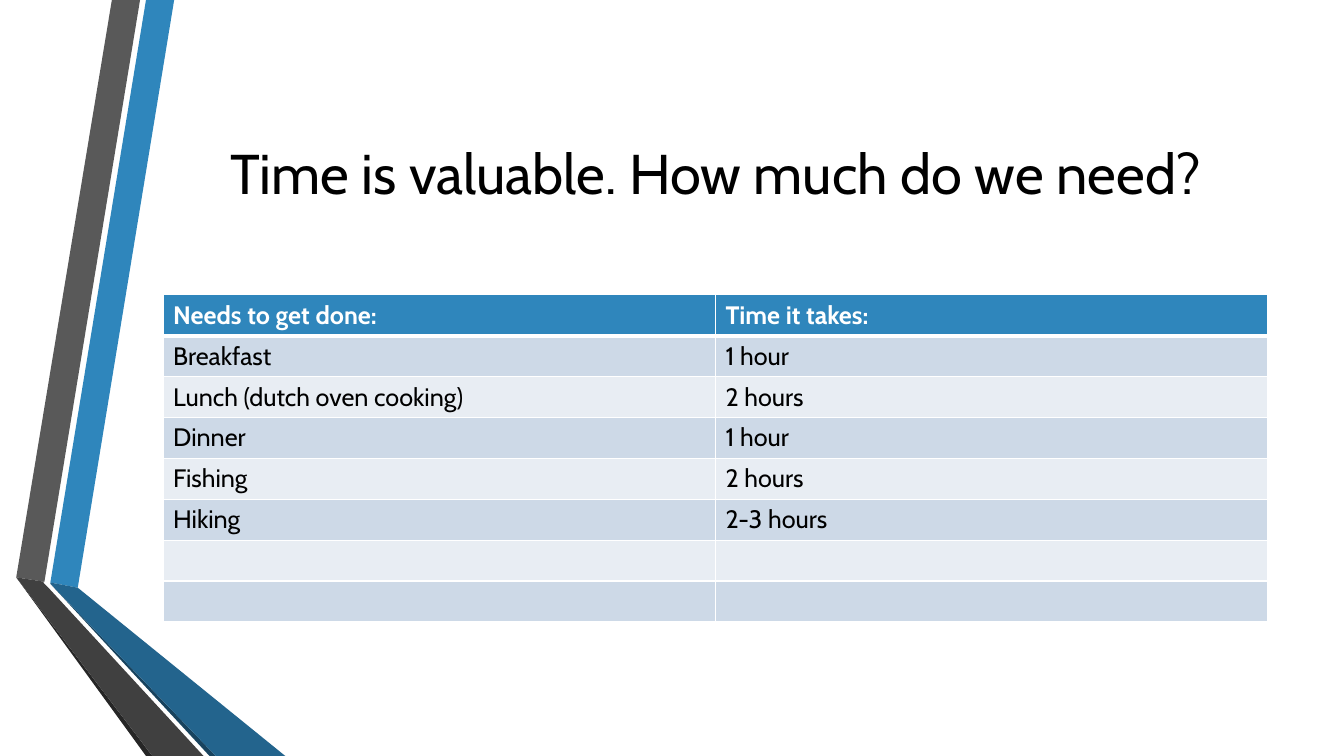
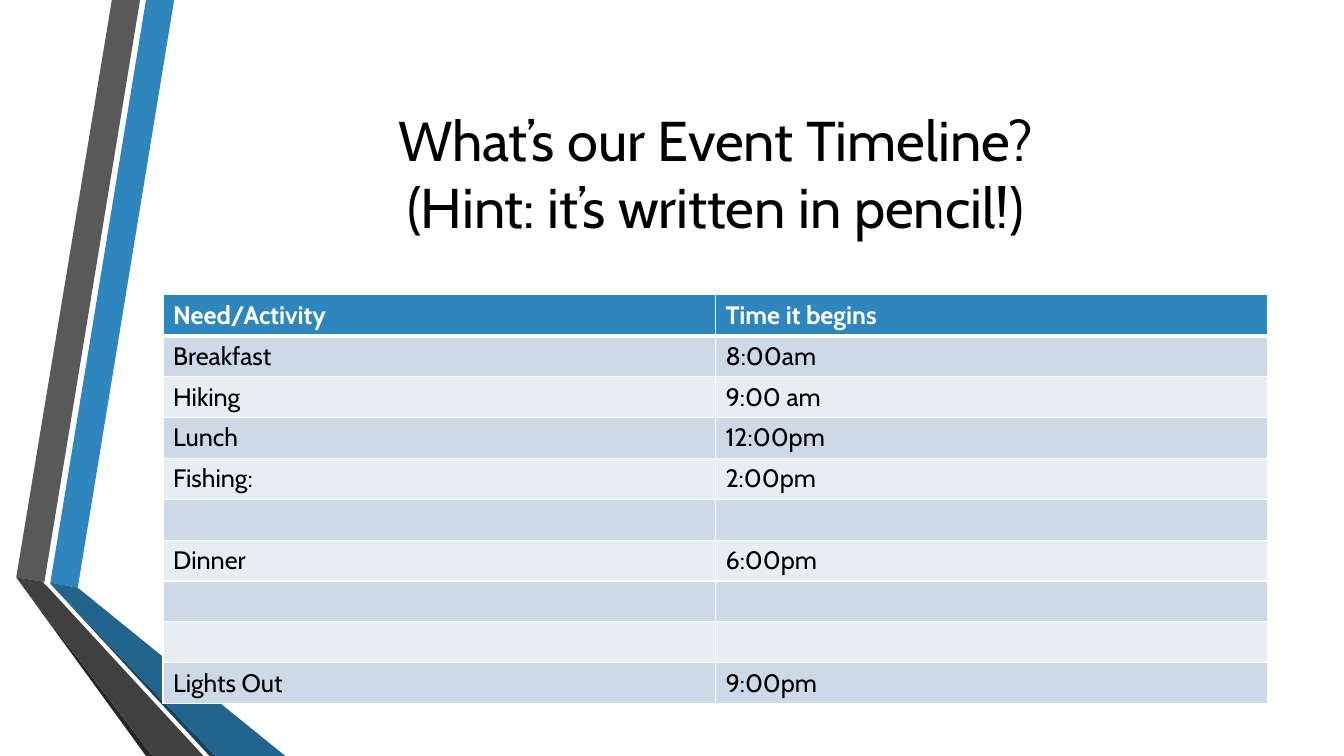
from lxml.etree import SubElement
from pptx import Presentation
from pptx.dml.color import RGBColor
from pptx.enum.text import MSO_ANCHOR, PP_ALIGN
from pptx.oxml.ns import qn
from pptx.util import Cm, Pt

FONT = "Cabin"
BLACK, WHITE, BLUE = "000000", "FFFFFF", "2F86BC"
STRIPES = ("CDD9E7", "E8EDF3")

# Lengths in centimetres
WIDTH, HEIGHT = 33.87, 19.05
LEFT, SPAN = 4.11, 27.84
TITLE_TOP, TITLE_HIGH = 1.9, 4.88
TABLE_TOP, ROW_HIGH = 7.43, 1.03

BANDS = [
    (BLUE, [(1.27, 14.68), (1.96, 14.81), (4.39, 0), (3.68, 0)]),
    ("595959", [(3.53, 0), (2.82, 0), (0.41, 14.55), (1.12, 14.66)]),
    ("262626", [(0.41, 14.55), (3.68, HEIGHT), (3.84, HEIGHT)]),
    ("18435E", [(1.27, 14.71), (5.28, HEIGHT), (5.44, HEIGHT)]),
    ("23648D", [(1.27, 14.68), (1.27, 14.71), (5.44, HEIGHT),
                (7.19, HEIGHT), (1.96, 14.81)]),
    ("404040", [(5.13, HEIGHT), (1.22, 14.81), (1.09, 14.68), (1.12, 14.66),
                (0.41, 14.55), (3.84, HEIGHT)]),
]

SLIDES = [
    (["Time is valuable. How much do we need?"],
     [("Needs to get done:", "Time it takes:"),
      ("Breakfast", "1 hour"),
      ("Lunch (dutch oven cooking)", "2 hours"),
      ("Dinner", "1 hour"),
      ("Fishing", "2 hours"),
      ("Hiking", "2-3 hours"),
      ("", ""),
      ("", "")]),
    (["What’s our Event Timeline?", "(Hint: it’s written in pencil!)"],
     [("Need/Activity", "Time it begins"),
      ("Breakfast", "8:00am"),
      ("Hiking", "9:00 am"),
      ("Lunch", "12:00pm"),
      ("Fishing:", "2:00pm"),
      ("", ""),
      ("Dinner", "6:00pm"),
      ("", ""),
      ("", ""),
      ("Lights Out", "9:00pm")]),
]


def paint(fill, color):
    fill.solid()
    fill.fore_color.rgb = RGBColor.from_string(color)


def add_run(para, text, size, color, bold=False):
    run = para.add_run()
    run.text = text
    run.font.name = FONT
    run.font.size = Pt(size)
    run.font.bold = bold
    run.font.color.rgb = RGBColor.from_string(color)


def add_bands(slide):
    for color, points in BANDS:
        start, *rest = [(Cm(x), Cm(y)) for x, y in points]
        builder = slide.shapes.build_freeform(*start)
        builder.add_line_segments(rest, close=True)
        band = builder.convert_to_shape()
        band.shadow.inherit = False
        paint(band.fill, color)
        band.line.fill.background()


def add_title(slide, lines):
    box = slide.shapes.add_textbox(
        Cm(LEFT), Cm(TITLE_TOP), Cm(SPAN), Cm(TITLE_HIGH))
    frame = box.text_frame
    frame.word_wrap = True
    frame.vertical_anchor = MSO_ANCHOR.MIDDLE
    para = frame.paragraphs[0]
    para.alignment = PP_ALIGN.CENTER
    for i, line in enumerate(lines):
        if i:
            para.add_line_break()
        add_run(para, line, 40, BLACK)


def add_borders(cell, top, bottom):
    """Draw white borders; call before the fill, which must follow in the XML."""
    props = cell._tc.get_or_add_tcPr()
    for side, width in (("L", 1), ("R", 1), ("T", top), ("B", bottom)):
        line = SubElement(props, qn(f"a:ln{side}"), w=str(Pt(width)))
        solid = SubElement(line, qn("a:solidFill"))
        SubElement(solid, qn("a:srgbClr"), val=WHITE)


def add_grid(slide, rows):
    table = slide.shapes.add_table(
        len(rows), len(rows[0]), Cm(LEFT), Cm(TABLE_TOP),
        Cm(SPAN), Cm(ROW_HIGH * len(rows))).table
    for r, texts in enumerate(rows):
        table.rows[r].height = Cm(ROW_HIGH)
        head = r == 0
        for c, text in enumerate(texts):
            cell = table.cell(r, c)
            add_borders(cell, 3 if r == 1 else 1, 3 if head else 1)
            paint(cell.fill, BLUE if head else STRIPES[(r - 1) % 2])
            if text:
                add_run(cell.text_frame.paragraphs[0], text, 18,
                        WHITE if head else BLACK, head)


def main():
    deck = Presentation()
    deck.slide_width, deck.slide_height = Cm(WIDTH), Cm(HEIGHT)
    for title, rows in SLIDES:
        slide = deck.slides.add_slide(deck.slide_layouts[6])
        add_bands(slide)
        add_title(slide, title)
        add_grid(slide, rows)
    deck.save("out.pptx")


if __name__ == "__main__":
    main()
